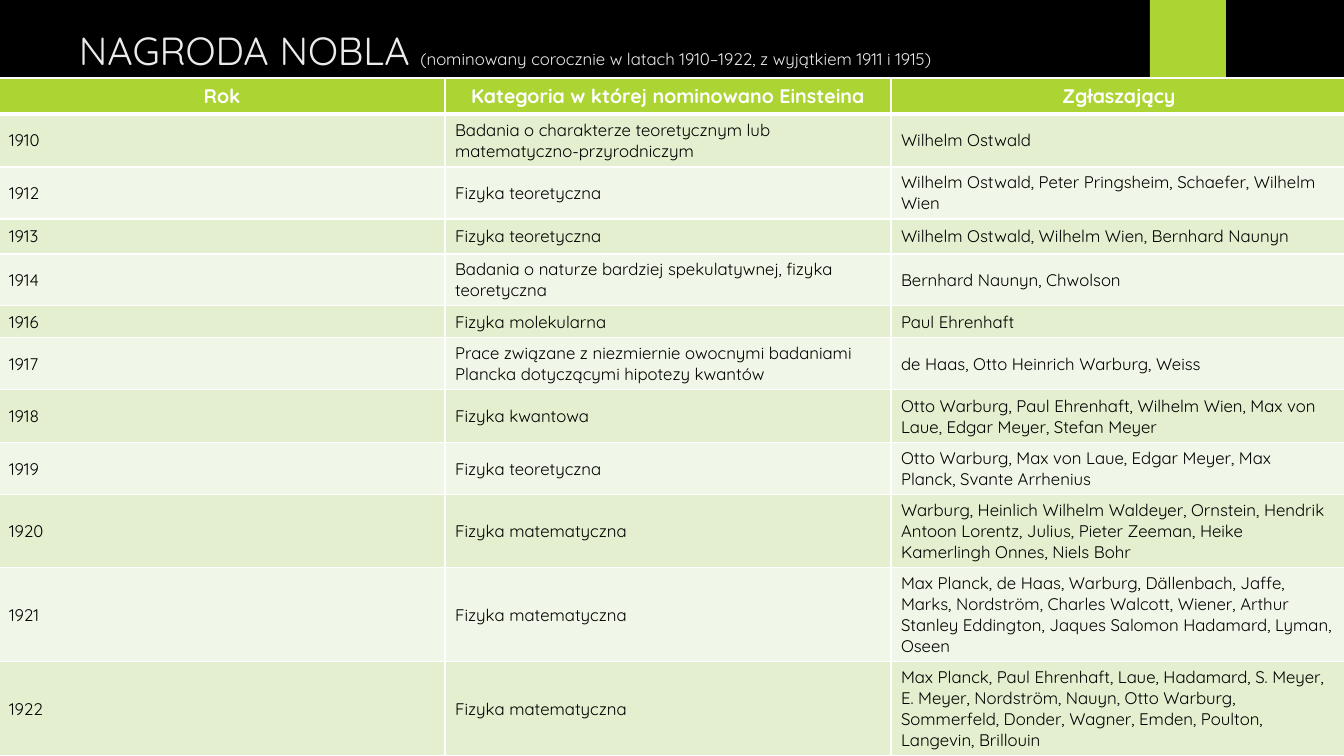
from lxml import etree
from pptx import Presentation
from pptx import util as u
from pptx.dml.color import RGBColor
from pptx.enum import shapes, text
from pptx.oxml import ns

# Content ("~" marks a non-breaking space)
TITLE = [
    ("NAGRODA NOBLA~", 28),
    ("(nominowany corocznie~w latach 1910–1922, z wyjątkiem 1911 i 1915)", 12),
]
HEADER = ("Rok", "Kategoria w której nominowano Einsteina", "Zgłaszający")
NOMINATIONS = [
    ("1910", "Badania o charakterze teoretycznym lub matematyczno-przyrodniczym",
     "Wilhelm Ostwald"),
    ("1912", "Fizyka teoretyczna",
     "Wilhelm Ostwald,~Peter Pringsheim, Schaefer,~Wilhelm Wien"),
    ("1913", "Fizyka teoretyczna",
     "Wilhelm Ostwald, Wilhelm Wien,~Bernhard Naunyn"),
    ("1914", "Badania o naturze bardziej spekulatywnej, fizyka teoretyczna",
     "Bernhard Naunyn, Chwolson"),
    ("1916", "Fizyka molekularna", "Paul Ehrenhaft"),
    ("1917", "Prace związane z niezmiernie owocnymi badaniami Plancka "
     "dotyczącymi hipotezy kwantów",
     "de Haas,~Otto Heinrich Warburg, Weiss"),
    ("1918", "Fizyka kwantowa",
     "Otto Warburg, Paul Ehrenhaft, Wilhelm Wien,~Max von Laue,~Edgar Meyer,"
     "~Stefan Meyer"),
    ("1919", "Fizyka teoretyczna",
     "Otto Warburg, Max von Laue, Edgar Meyer,~Max Planck,~Svante Arrhenius"),
    ("1920", "Fizyka matematyczna",
     "Warburg,~Heinlich Wilhelm Waldeyer, Ornstein,~Hendrik Antoon Lorentz, "
     "Julius,~Pieter Zeeman,~Heike Kamerlingh Onnes, Niels Bohr"),
    ("1921", "Fizyka matematyczna",
     "Max Planck, de Haas, Warburg, Dällenbach, Jaffe, Marks, Nordström,"
     "~Charles Walcott, Wiener,~Arthur Stanley Eddington,"
     "~Jaques Salomon Hadamard, Lyman, Oseen"),
    ("1922", "Fizyka matematyczna",
     "Max Planck, Paul Ehrenhaft, Laue, Hadamard, S. Meyer, E. Meyer, "
     "Nordström, Nauyn, Otto Warburg, Sommerfeld, Donder, Wagner, Emden, "
     "Poulton, Langevin, Brillouin"),
]
COLUMN_WIDTHS = (446, 446, 456)
ROW_HEIGHTS = (36, 53, 52, 35, 52, 32, 52, 53, 52, 73, 94, 94)

FONT = "Quicksand"
COLORS = {
    "background": "000000", "accent": "ACD433", "title": "EBEBEB",
    "white": "FFFFFF", "body": "000000", "odd": "E3EFCE", "even": "F1F7E8",
}


def px(length):
    return u.Emu(round(length * 914400 / 100.8))


def color(name):
    return RGBColor.from_string(COLORS[name])


def spaced(words):
    return words.replace("~", chr(160))


def set_borders(cell, bottom_width):
    properties = cell._tc.get_or_add_tcPr()
    widths = {"lnL": 1, "lnR": 1, "lnT": 1, "lnB": bottom_width}
    for index, (side, width) in enumerate(widths.items()):
        line = etree.Element(ns.qn(f"a:{side}"), w=str(u.Pt(width)))
        fill = etree.SubElement(line, ns.qn("a:solidFill"))
        etree.SubElement(fill, ns.qn("a:srgbClr"), val=COLORS["white"])
        properties.insert(index, line)


def add_title(slide):
    box = slide.shapes.add_textbox(px(69), px(21), px(1075), px(80))
    frame = box.text_frame
    frame.word_wrap = True
    paragraph = frame.paragraphs[0]
    paragraph.font.name = FONT
    paragraph.font.color.rgb = color("title")
    for words, size in TITLE:
        run = paragraph.add_run()
        run.text = spaced(words)
        run.font.size = u.Pt(size)


def add_nominations(slide):
    rows = [HEADER, *NOMINATIONS]
    table = slide.shapes.add_table(
        len(rows), len(HEADER), px(-1), px(78),
        px(sum(COLUMN_WIDTHS)), px(sum(ROW_HEIGHTS))).table
    for column, width in zip(table.columns, COLUMN_WIDTHS):
        column.width = px(width)
    for i, (values, height) in enumerate(zip(rows, ROW_HEIGHTS)):
        table.rows[i].height = px(height)
        heading = i == 0
        fill = "accent" if heading else ("odd" if i % 2 else "even")
        for j, value in enumerate(values):
            cell = table.cell(i, j)
            cell.text = spaced(value)
            cell.vertical_anchor = text.MSO_ANCHOR.MIDDLE
            cell.fill.solid()
            cell.fill.fore_color.rgb = color(fill)
            set_borders(cell, 3 if i == 0 else 1)
            paragraph = cell.text_frame.paragraphs[0]
            if heading:
                paragraph.alignment = text.PP_ALIGN.CENTER
            paragraph.font.name = FONT
            paragraph.font.size = u.Pt(14 if heading else 12)
            paragraph.font.bold = heading
            paragraph.font.color.rgb = color("white" if heading else "body")


def main():
    presentation = Presentation()
    presentation.slide_width, presentation.slide_height = px(1344), px(756)
    slide = presentation.slides.add_slide(presentation.slide_layouts[6])
    slide.background.fill.solid()
    slide.background.fill.fore_color.rgb = color("background")

    # Green tab at the top
    tab = slide.shapes.add_shape(
        shapes.MSO_SHAPE.RECTANGLE, px(1150), px(0), px(76), px(126))
    tab.shadow.inherit = False
    tab.fill.solid()
    tab.fill.fore_color.rgb = color("accent")
    tab.line.fill.background()

    add_title(slide)
    add_nominations(slide)
    presentation.save("out.pptx")


if __name__ == "__main__":
    main()
